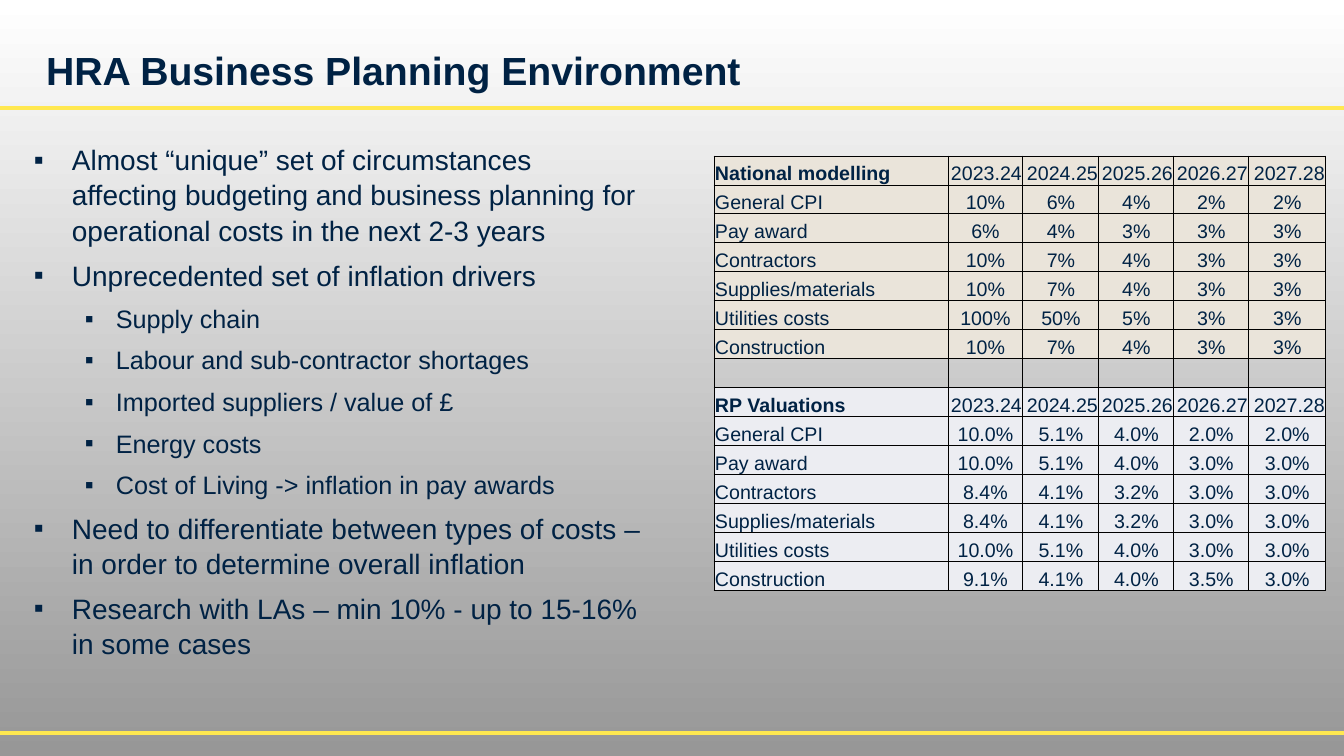
import dataclasses

import lxml.etree
import pptx
import pptx.dml.color
import pptx.enum.shapes
import pptx.enum.text
import pptx.oxml
import pptx.oxml.ns
import pptx.util

EMU_PER_PX = 914400 / 100.8
FONT = "Arial"
NAVY = pptx.dml.color.RGBColor(0x00, 0x22, 0x44)
YELLOW = pptx.dml.color.RGBColor(0xFF, 0xE8, 0x50)
WHITE = pptx.dml.color.RGBColor(0xFF, 0xFF, 0xFF)
GREY = pptx.dml.color.RGBColor(0x97, 0x97, 0x97)
BEIGE = pptx.dml.color.RGBColor(0xEA, 0xE4, 0xDA)
LAVENDER = pptx.dml.color.RGBColor(0xEC, 0xED, 0xF2)
BLACK = pptx.dml.color.RGBColor(0x00, 0x00, 0x00)
ALIGN = pptx.enum.text.PP_ALIGN
ANCHOR = pptx.enum.text.MSO_ANCHOR


@dataclasses.dataclass(frozen=True)
class BulletStyle:
    indent: int
    hanging: int
    size: int


@dataclasses.dataclass(frozen=True)
class Bullet:
    text: str
    level: int = 0


@dataclasses.dataclass(frozen=True)
class RateBlock:
    heading: str
    fill: pptx.dml.color.RGBColor
    rates: tuple[str, ...]


BULLET_STYLES = (BulletStyle(45, 38, 20), BulletStyle(89, 31, 18))
BULLETS = (
    Bullet("Almost “unique” set of circumstances affecting budgeting and business planning "
           "for operational costs in the next 2-3 years"),
    Bullet("Unprecedented set of inflation drivers"),
    Bullet("Supply chain", 1),
    Bullet("Labour and sub-contractor shortages", 1),
    Bullet("Imported suppliers / value of £", 1),
    Bullet("Energy costs", 1),
    Bullet("Cost of Living -> inflation in pay awards", 1),
    Bullet("Need to differentiate between types of costs – in order to determine overall inflation"),
    Bullet("Research with LAs – min 10% - up to 15-16% in some cases"),
)
YEARS = "2023.24 2024.25 2025.26 2026.27 2027.28"
COSTS = ("General CPI", "Pay award", "Contractors", "Supplies/materials",
         "Utilities costs", "Construction")
RATE_BLOCKS = (
    RateBlock("National modelling", BEIGE, (
        "10% 6% 4% 2% 2%", "6% 4% 3% 3% 3%", "10% 7% 4% 3% 3%",
        "10% 7% 4% 3% 3%", "100% 50% 5% 3% 3%", "10% 7% 4% 3% 3%")),
    RateBlock("RP Valuations", LAVENDER, (
        "10.0% 5.1% 4.0% 2.0% 2.0%", "10.0% 5.1% 4.0% 3.0% 3.0%",
        "8.4% 4.1% 3.2% 3.0% 3.0%", "8.4% 4.1% 3.2% 3.0% 3.0%",
        "10.0% 5.1% 4.0% 3.0% 3.0%", "9.1% 4.1% 4.0% 3.5% 3.0%")),
)
COLUMN_WIDTHS = (234, 75, 76, 75, 75, 77)
ROW_HEIGHT = 29
BLOCK_ROWS = len(COSTS) + 1
ROW_COUNT = BLOCK_ROWS * len(RATE_BLOCKS) + 1


def px(length: int) -> int:
    return round(length * EMU_PER_PX)


def add_element(parent, tag: str, **attributes: str):
    element = lxml.etree.SubElement(parent, pptx.oxml.ns.qn(tag))
    for name, value in attributes.items():
        element.set(name, value)
    return element


def format_runs(para, size: int, bold: bool = False) -> None:
    for span in para.runs:
        span.font.name = FONT
        span.font.size = pptx.util.Pt(size)
        span.font.bold = bold
        span.font.color.rgb = NAVY


def paint_background(page) -> None:
    fill = page.background.fill
    fill.gradient()
    fill.gradient_angle = 270
    for stop, position, color in zip(fill.gradient_stops, (0, 1), (WHITE, GREY)):
        stop.position = position
        stop.color.rgb = color


def add_rule(page, y: int) -> None:
    rule = page.shapes.add_connector(
        pptx.enum.shapes.MSO_CONNECTOR.STRAIGHT, 0, px(y), px(1344), px(y))
    rule.line.color.rgb = YELLOW
    rule.line.width = pptx.util.Pt(3)
    add_element(rule._element.spPr, "a:effectLst")


def write_title(page, text: str) -> None:
    title = page.shapes.title
    title.left, title.top, title.width, title.height = map(px, (36, 24, 899, 75))
    title.text_frame.text = text
    title.text_frame.auto_size = pptx.enum.text.MSO_AUTO_SIZE.NONE
    title.text_frame.vertical_anchor = ANCHOR.BOTTOM
    para = title.text_frame.paragraphs[0]
    para.alignment = ALIGN.LEFT
    para.line_spacing = 0.9
    format_runs(para, 28, bold=True)


def add_bullets(page) -> None:
    box = page.shapes.add_textbox(*map(px, (17, 136, 638, 563)))
    frame = box.text_frame
    frame.word_wrap = True
    frame.text = "\n".join(bullet.text for bullet in BULLETS)
    for index, (para, bullet) in enumerate(zip(frame.paragraphs, BULLETS)):
        style = BULLET_STYLES[bullet.level]
        para.level = bullet.level
        properties = para._p.get_or_add_pPr()
        properties.set("marL", str(px(style.indent)))
        properties.set("indent", str(-px(style.hanging)))
        add_element(properties, "a:buFont", typeface=FONT)
        add_element(properties, "a:buChar", char="▪")
        para.line_spacing = 1.05
        if index:
            para.space_before = pptx.util.Pt(7)
        format_runs(para, style.size)


def prepare_cell(cell) -> None:
    cell.margin_left = cell.margin_right = cell.margin_top = px(1)
    cell.margin_bottom = 0
    cell.vertical_anchor = ANCHOR.BOTTOM
    properties = cell._tc.get_or_add_tcPr()
    for side in ("a:lnL", "a:lnR", "a:lnT", "a:lnB"):
        border = add_element(properties, side, w=str(pptx.util.Pt(0.75)))
        add_element(add_element(border, "a:solidFill"), "a:srgbClr", val=str(BLACK))


def write_row(table, row: int, label: str, values: str,
              fill: pptx.dml.color.RGBColor, heading: bool) -> None:
    for column, text in enumerate((label, *values.split())):
        cell = table.cell(row, column)
        cell.fill.solid()
        cell.fill.fore_color.rgb = fill
        cell.text_frame.text = text
        para = cell.text_frame.paragraphs[0]
        if column:
            para.alignment = ALIGN.RIGHT if heading else ALIGN.CENTER
        format_runs(para, 14, bold=heading and column == 0)


def add_rate_table(page) -> None:
    frame = page.shapes.add_table(
        ROW_COUNT, len(COLUMN_WIDTHS), px(714), px(156),
        px(sum(COLUMN_WIDTHS)), px(ROW_HEIGHT * ROW_COUNT))
    table = frame.table
    table.first_row = table.horz_banding = False
    for column, width in zip(table.columns, COLUMN_WIDTHS):
        column.width = px(width)
    for row in table.rows:
        row.height = px(ROW_HEIGHT)
    for cell in table.iter_cells():
        prepare_cell(cell)
    for index, block in enumerate(RATE_BLOCKS):
        top = index * (BLOCK_ROWS + 1)
        write_row(table, top, block.heading, YEARS, block.fill, True)
        for row, (cost, rates) in enumerate(zip(COSTS, block.rates), top + 1):
            write_row(table, row, cost, rates, block.fill, False)
    for cell in table.rows[BLOCK_ROWS].cells:
        cell.fill.background()
        add_element(cell.text_frame.paragraphs[0]._p, "a:endParaRPr", sz="1400")


def main() -> None:
    deck = pptx.Presentation()
    deck.slide_width, deck.slide_height = px(1344), px(756)
    page = deck.slides.add_slide(deck.slide_layouts[5])
    paint_background(page)
    for y in (108, 733):
        add_rule(page, y)
    write_title(page, "HRA Business Planning Environment")
    add_bullets(page)
    add_rate_table(page)
    deck.save("out.pptx")


if __name__ == "__main__":
    main()
